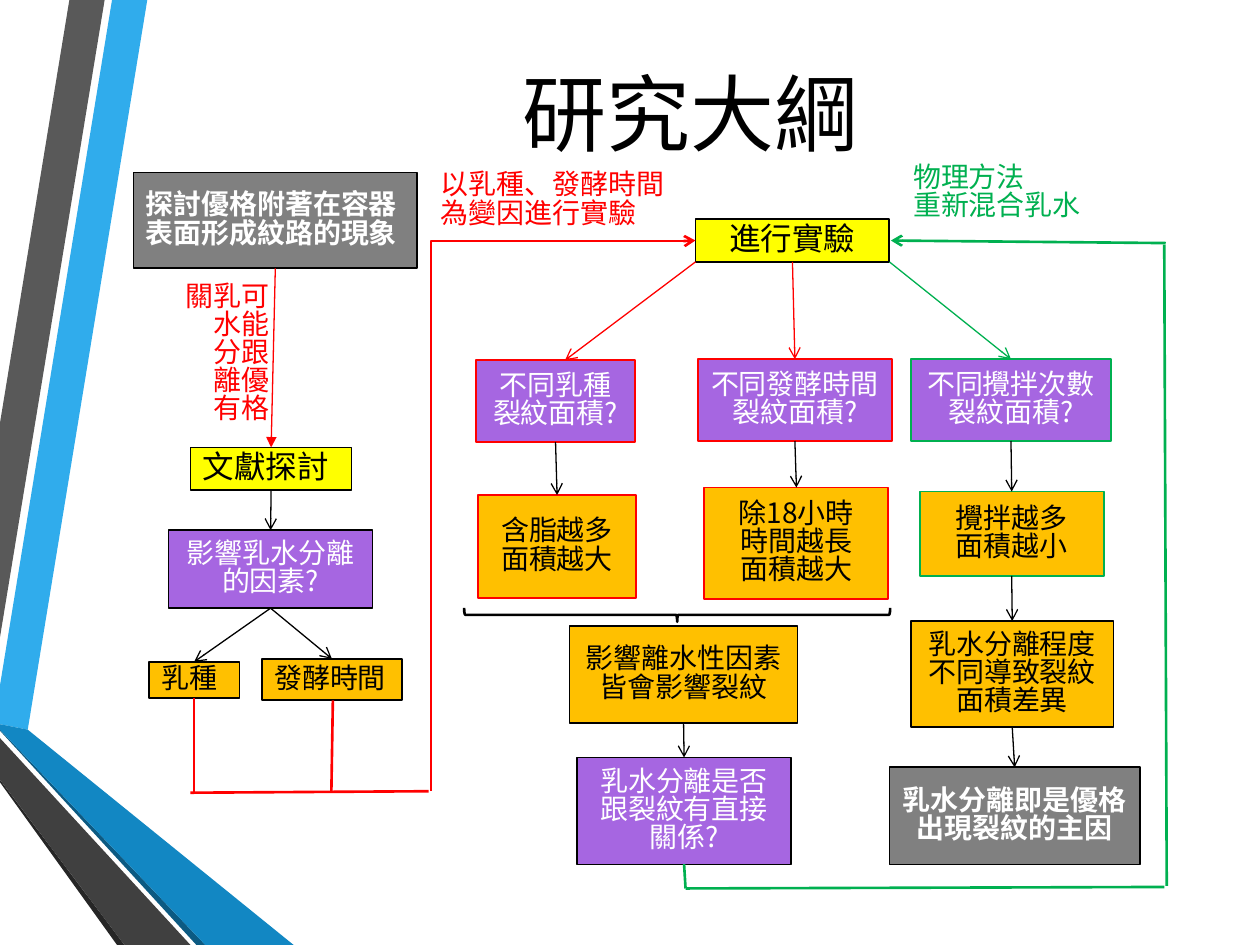
from lxml import etree
from pptx import Presentation
from pptx.dml.color import RGBColor
from pptx.enum.shapes import MSO_CONNECTOR, MSO_SHAPE
from pptx.enum.text import MSO_ANCHOR, PP_ALIGN
from pptx.oxml.ns import qn
from pptx.util import Cm, Pt

STRAIGHT, ELBOW = MSO_CONNECTOR.STRAIGHT, MSO_CONNECTOR.ELBOW
RECTANGLE, BRACE = MSO_SHAPE.RECTANGLE, MSO_SHAPE.RIGHT_BRACE
MIDDLE, LEFT, CENTER = MSO_ANCHOR.MIDDLE, PP_ALIGN.LEFT, PP_ALIGN.CENTER
FONT = "Noto Sans CJK SC"
BLACK, WHITE, RED, GREEN = "000000", "FFFFFF", "FF0000", "00B050"
GRAY, YELLOW, PURPLE, ORANGE = "808080", "FFFF00", "A666E1", "FFC000"
TEXT_COLORS = {GRAY: WHITE, PURPLE: WHITE, YELLOW: BLACK, ORANGE: BLACK}
TEXT_SIZES = {GRAY: 16, PURPLE: 16, YELLOW: 18, ORANGE: 16}

BANDS = [
    ("30ACEC", [(0, 13.82), (0, 14.6), (0.56, 14.71), (2.97, 0), (2.26, 0)]),
    ("595959", [(2.11, 0), (1.4, 0), (0, 8.53), (0, 12.85)]),
    ("262626", [(0, 15.72), (0, 15.77), (2.36, 19.05), (2.51, 19.05)]),
    ("0C5A82", [(0, 14.71), (0, 14.73), (3.96, 19.05), (4.14, 19.05)]),
    ("1287C3", [(0, 14.71), (4.14, 19.05), (5.92, 19.05), (0.56, 14.71), (0, 14.6)]),
    ("404040", [(0, 15.72), (2.51, 19.05), (3.84, 19.05), (0, 14.88)]),
]

BOXES = {
    "topic": ("探討優格附著在容器表面形成紋路的現象", (2.69, 3.48, 5.72, 1.93), GRAY, BLACK, LEFT),
    "literature": ("文獻探討", (3.84, 9.02, 3.25, 0.86), YELLOW, BLACK, LEFT),
    "factors": ("影響乳水分離的因素?", (3.4, 10.69, 4.11, 1.57), PURPLE, BLACK, CENTER),
    "milk": ("乳種", (3, 13.34, 1.83, 0.74), ORANGE, BLACK, LEFT),
    "time": ("發酵時間", (5.28, 13.28, 2.82, 0.84), ORANGE, BLACK, LEFT),
    "experiment": ("進行實驗", (14.02, 4.42, 3.91, 0.86), YELLOW, BLACK, CENTER),
    "milk question": ("不同乳種\n裂紋面積?", (9.6, 7.26, 3.2, 1.65), PURPLE, RED, CENTER),
    "time question": ("不同發酵時間\n裂紋面積?", (14.07, 7.24, 3.91, 1.65), PURPLE, RED, CENTER),
    "stir question": ("不同攪拌次數\n裂紋面積?", (18.36, 7.24, 4.04, 1.65), PURPLE, GREEN, CENTER),
    "milk result": ("含脂越多\n面積越大", (9.63, 9.98, 3.2, 2.08), ORANGE, RED, CENTER),
    "time result": ("除18小時\n時間越長\n面積越大", (14.2, 9.83, 3.71, 2.24), ORANGE, RED, CENTER),
    "stir result": ("攪拌越多\n面積越小", (18.54, 9.91, 3.71, 1.7), ORANGE, GREEN, CENTER),
    "summary": ("影響離水性因素皆會影響裂紋", (11.48, 12.62, 4.6, 1.96), ORANGE, BLACK, CENTER),
    "relation": ("乳水分離是否跟裂紋有直接關係?", (11.63, 15.27, 4.32, 2.16), PURPLE, BLACK, CENTER),
    "degree": ("乳水分離程度不同導致裂紋面積差異", (18.36, 12.52, 4.09, 2.13), ORANGE, BLACK, CENTER),
    "conclusion": ("乳水分離即是優格出現裂紋的主因", (17.93, 15.47, 5.05, 1.96), GRAY, BLACK, CENTER),
}

LINKS = [
    ("topic", "literature", RED, "triangle", 0.5, 0.5),
    ("experiment", "milk question", RED, "arrow", 0, 0.56),
    ("experiment", "time question", RED, "arrow", 0.5, 0.5),
    ("experiment", "stir question", GREEN, "arrow", 1, 0.5),
] + [(upper, lower, BLACK, "arrow", 0.5, 0.5) for upper, lower in [
    ("literature", "factors"), ("factors", "milk"), ("factors", "time"),
    ("milk question", "milk result"), ("time question", "time result"),
    ("stir question", "stir result"), ("stir result", "degree"),
    ("degree", "conclusion"), ("summary", "relation"),
]]

ROUTES = [
    ((3.91, 14.07, 3.91, 15.98), RED, None),
    ((6.71, 14.12, 6.68, 15.95), RED, None),
    ((3.84, 15.98, 8.64, 15.95), RED, None),
    ((13.79, 17.42, 13.82, 17.91), GREEN, None),
    ((13.82, 17.91, 23.47, 17.88), GREEN, None),
    ((23.52, 17.86, 23.47, 4.93), GREEN, None),
    ((23.5, 4.9, 17.96, 4.85), GREEN, "arrow"),
]

NOTES = [
    ("可能跟優格乳水分離有關", (3.43, 5.44, 2.06, 3.68), RED, True),
    ("以乳種、發酵時間為變因進行實驗", (8.64, 3.35, 5.18, 1.5), RED, False),
    ("物理方法\n重新混合乳水", (18.16, 3.2, 7.21, 1.5), GREEN, False),
]


def rgb(value):
    """Return the colour for a hex string."""
    return RGBColor.from_string(value)


def lengths(values):
    """Turn centimetre numbers into lengths."""
    return [Cm(value) for value in values]


def write(shape, text, size, color, align=LEFT, bold=False, spacing=0.84):
    """Fill a shape with evenly formatted paragraphs."""
    frame = shape.text_frame
    frame.text = text
    for paragraph in frame.paragraphs:
        paragraph.alignment = align
        paragraph.line_spacing = spacing
        font = paragraph.font
        font.name, font.size, font.bold = FONT, Pt(size), bold
        font.color.rgb = rgb(color)
    for properties in shape.element.iter(qn("a:defRPr")):
        etree.SubElement(properties, qn("a:ea"), typeface=FONT)
    return frame


def add_title(slide):
    """Place the slide title."""
    title = slide.shapes.title
    title.left, title.top, title.width, title.height = lengths((2.49, 0.66, 22.86, 3.18))
    write(title, "研究大綱", 48, BLACK, CENTER, spacing=1).vertical_anchor = MIDDLE


def add_band(slide, color, points):
    """Draw one slanted band of the left-hand decoration."""
    start, *others = [lengths(point) for point in points]
    builder = slide.shapes.build_freeform(*start)
    builder.add_line_segments(others, close=True)
    band = builder.convert_to_shape()
    band.shadow.inherit = False
    band.fill.solid()
    band.fill.fore_color.rgb = rgb(color)
    band.line.fill.background()


def add_box(slide, text, place, fill, outline, align):
    """Draw one flowchart box."""
    box = slide.shapes.add_shape(RECTANGLE, *lengths(place))
    box.shadow.inherit = False
    box.fill.solid()
    box.fill.fore_color.rgb = rgb(fill)
    box.line.color.rgb = rgb(outline)
    box.line.width = Pt(1)
    frame = write(box, text, TEXT_SIZES[fill], TEXT_COLORS[fill], align, fill == GRAY)
    frame.vertical_anchor = MIDDLE
    frame.word_wrap = "\n" not in text


def add_note(slide, text, place, color, vertical):
    """Add a coloured note beside an arrow."""
    note = slide.shapes.add_textbox(*lengths(place))
    frame = write(note, text, 16, color)
    frame.word_wrap = True
    if vertical:
        note.element.find(".//" + qn("a:bodyPr")).set("vert", "eaVert")


def add_line(slide, ends, color, width, head=None, kind=STRAIGHT):
    """Draw a connector with an optional arrowhead."""
    connector = slide.shapes.add_connector(kind, *lengths(ends))
    connector.line.color.rgb = rgb(color)
    connector.line.width = Pt(width)
    properties = connector.element.spPr
    if head:
        etree.SubElement(properties.find(qn("a:ln")), qn("a:tailEnd"), type=head)
    etree.SubElement(properties, qn("a:effectLst"))
    return connector


def add_link(slide, upper, lower, color, head, start, finish):
    """Join the bottom of one box to the top of another."""
    left, top, width, height = BOXES[upper][1]
    lower_left, lower_top, lower_width, _ = BOXES[lower][1]
    ends = (left + start * width, top + height, lower_left + finish * lower_width, lower_top)
    add_line(slide, ends, color, 0.75, head)


def add_upward_elbow(slide, start_x, start_y, end_x, end_y):
    """Draw the red elbow arrow that rises and then turns right."""
    center_x, center_y = (start_x + end_x) / 2, (start_y + end_y) / 2
    half_width, half_height = (start_y - end_y) / 2, (end_x - start_x) / 2
    ends = (center_x + half_width, center_y + half_height,
            center_x - half_width, center_y - half_height)
    elbow = add_line(slide, ends, RED, 1.5, "arrow", ELBOW)
    elbow.element.find(".//" + qn("a:xfrm")).set("rot", "5400000")
    adjustments = elbow.element.find(".//" + qn("a:avLst"))
    etree.SubElement(adjustments, qn("a:gd"), name="adj1", fmla="val 99900")


def add_brace(slide):
    """Draw the brace under the two factor results."""
    brace = slide.shapes.add_shape(BRACE, *lengths((13.51, 8.1, 0.28, 8.59)))
    brace.rotation = 90
    brace.shadow.inherit = False
    brace.fill.background()
    brace.line.color.rgb = rgb(BLACK)
    brace.line.width = Pt(1.5)


def main():
    """Build the research outline slide."""
    presentation = Presentation()
    presentation.slide_width, presentation.slide_height = lengths((25.4, 19.05))
    slide = presentation.slides.add_slide(presentation.slide_layouts[5])
    add_title(slide)
    for band in BANDS:
        add_band(slide, *band)
    for note in NOTES:
        add_note(slide, *note)
    for box in BOXES.values():
        add_box(slide, *box)
    for link in LINKS:
        add_link(slide, *link)
    for ends, color, head in ROUTES:
        add_line(slide, ends, color, 1.5, head)
    add_upward_elbow(slide, 8.69, 15.95, 14.02, 4.85)
    add_brace(slide)
    presentation.save("out.pptx")


if __name__ == "__main__":
    main()
